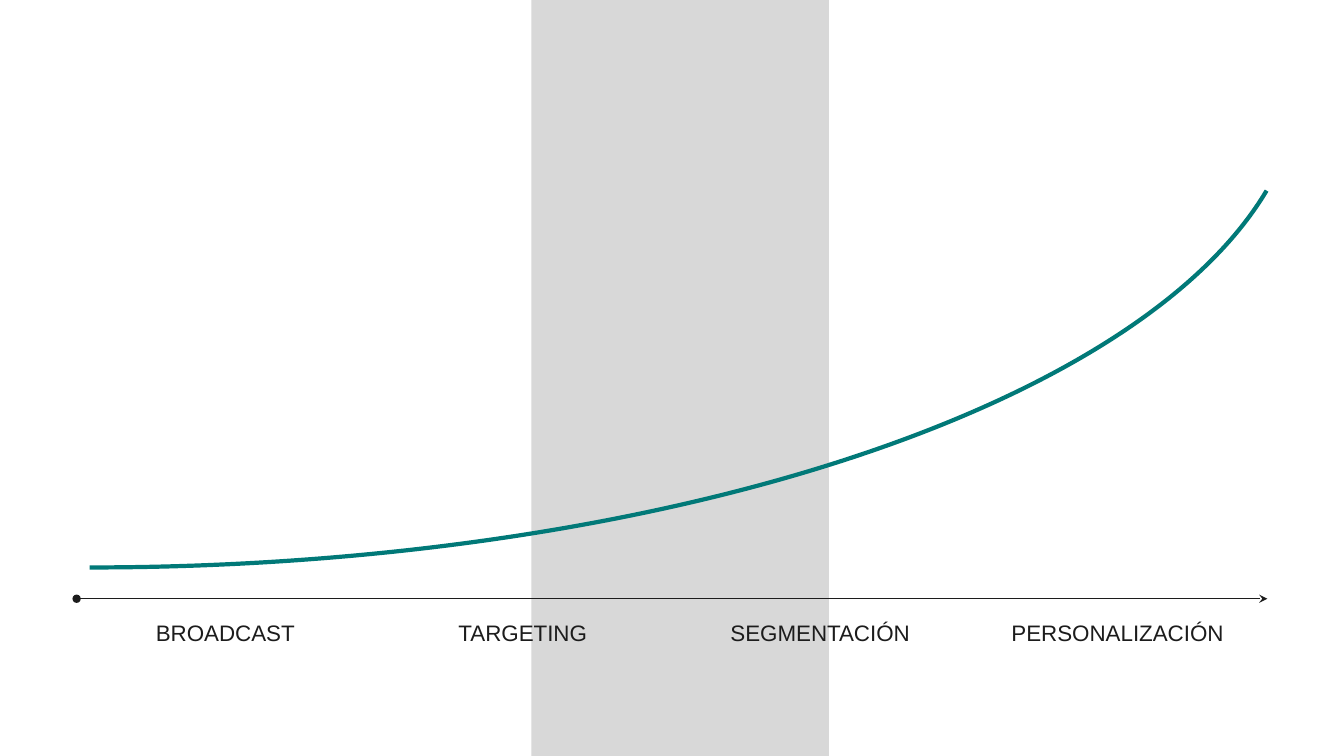
from lxml import etree
from pptx import Presentation
from pptx.dml.color import RGBColor
from pptx.enum.shapes import MSO_CONNECTOR, MSO_SHAPE
from pptx.enum.text import MSO_AUTO_SIZE, PP_ALIGN
from pptx.oxml.ns import qn
from pptx.util import Pt

RECTANGLE = MSO_SHAPE.RECTANGLE
ARC = MSO_SHAPE.ARC
STRAIGHT = MSO_CONNECTOR.STRAIGHT
CENTER = PP_ALIGN.CENTER
FIT_SHAPE = MSO_AUTO_SIZE.SHAPE_TO_FIT_TEXT

EMU_PER_PX = 9144  # 100 px to the inch
SLIDE_W, SLIDE_H = 1333, 750
INK, TEAL, GREY = "1C1C1C", "017978", "D8D8D8"
FONT = "Arial"

AXIS_LEFT, AXIS_Y, AXIS_W = 76, 594, 1181
STAGE_W = 295
# Each stage with the width of its label
STAGES = [
    ("BROADCAST", 295),
    ("TARGETING", 149),
    ("SEGMENTACIÓN", 200),
    ("PERSONALIZACIÓN", 233),
]


def px(length):
    return round(length * EMU_PER_PX)


def color(hex_string):
    return RGBColor.from_string(hex_string)


def add_band(slide, left, top, width, height):
    band = slide.shapes.add_shape(RECTANGLE, px(left), px(top), px(width), px(height))
    band.shadow.inherit = False
    band.fill.solid()
    band.fill.fore_color.rgb = color(GREY)
    band.line.fill.background()


def add_axis(slide, left, y, width):
    axis = slide.shapes.add_connector(STRAIGHT, px(left), px(y), px(left + width), px(y))
    axis.line.color.rgb = color(INK)
    axis.line.width = Pt(1)
    outline = axis.line._get_or_add_ln()
    for end, style in (("a:headEnd", "oval"), ("a:tailEnd", "stealth")):
        etree.SubElement(outline, qn(end)).set("type", style)
    etree.SubElement(axis._element.spPr, qn("a:effectLst"))


def add_stage_labels(slide, left, top, height):
    """Centre each label in its own equal stretch of the axis."""
    for index, (stage, width) in enumerate(STAGES):
        label_left = left + index * STAGE_W + (STAGE_W - width) / 2
        label = slide.shapes.add_textbox(px(label_left), px(top), px(width), px(height))
        frame = label.text_frame
        frame.word_wrap = True
        frame.auto_size = FIT_SHAPE
        paragraph = frame.paragraphs[0]
        paragraph.alignment = CENTER
        run = paragraph.add_run()
        run.text = stage
        run.font.name = FONT
        run.font.size = Pt(16)
        run.font.color.rgb = color(INK)


def add_growth_curve(slide, left, top, width, height):
    """Draw the lower right quarter of the ellipse that fills the box."""
    curve = slide.shapes.add_shape(ARC, px(left), px(top), px(width), px(height))
    curve.shadow.inherit = False
    curve.adjustments[0] = 3.38
    curve.adjustments[1] = 54
    curve.fill.background()
    curve.line.color.rgb = color(TEAL)
    curve.line.width = Pt(3)


def build_stages_slide(prs):
    slide = prs.slides.add_slide(prs.slide_layouts[6])
    add_band(slide, 527, 0, STAGE_W, SLIDE_H)
    add_axis(slide, AXIS_LEFT, AXIS_Y, AXIS_W)
    add_stage_labels(slide, AXIS_LEFT, AXIS_Y + 15, 37)
    add_growth_curve(slide, -1112, -415, 2402, 978)


def main():
    prs = Presentation()
    prs.slide_width, prs.slide_height = px(SLIDE_W), px(SLIDE_H)
    build_stages_slide(prs)
    prs.save("out.pptx")


if __name__ == "__main__":
    main()
